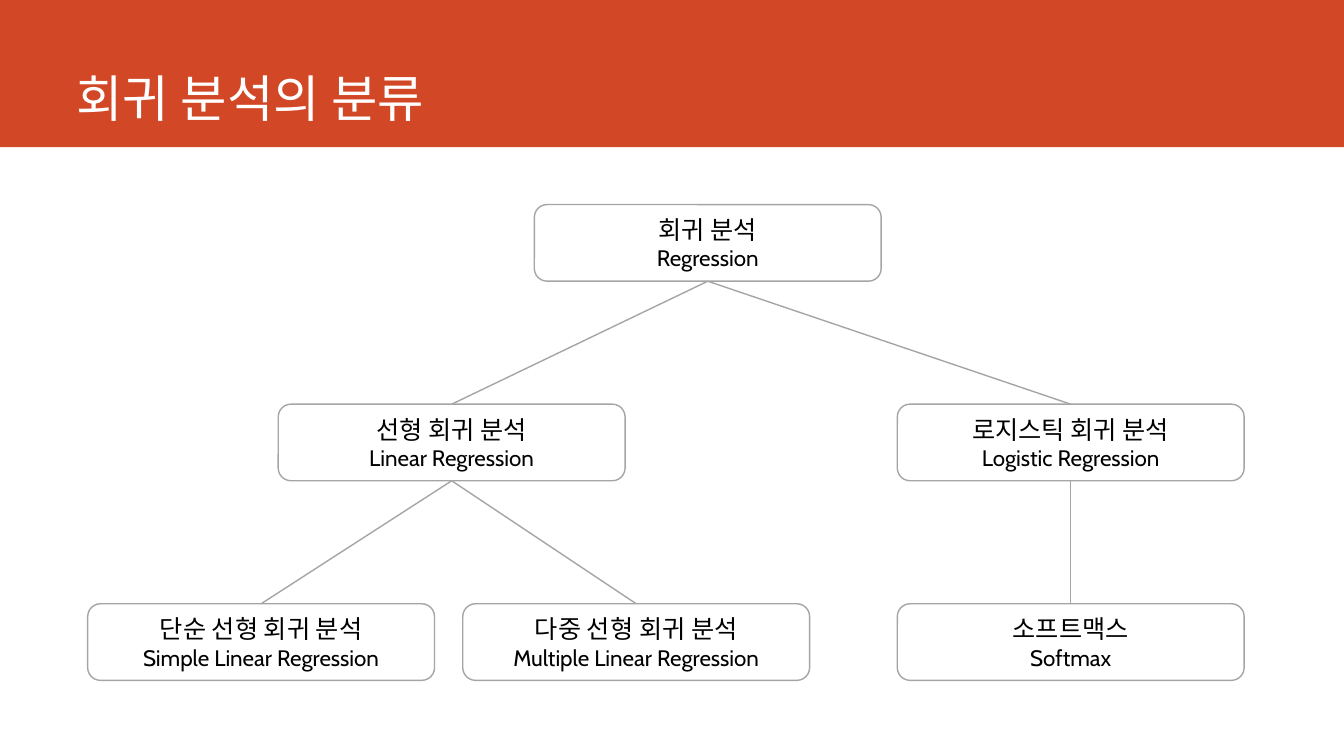
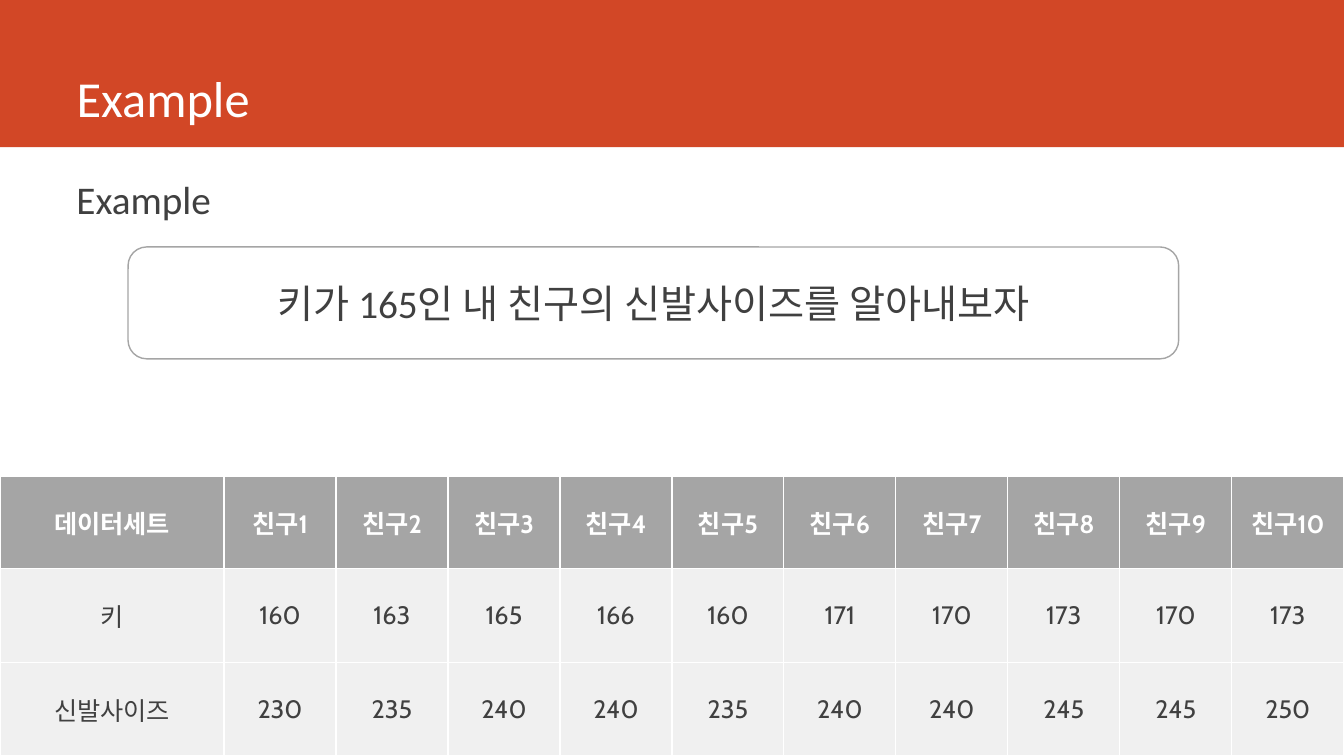
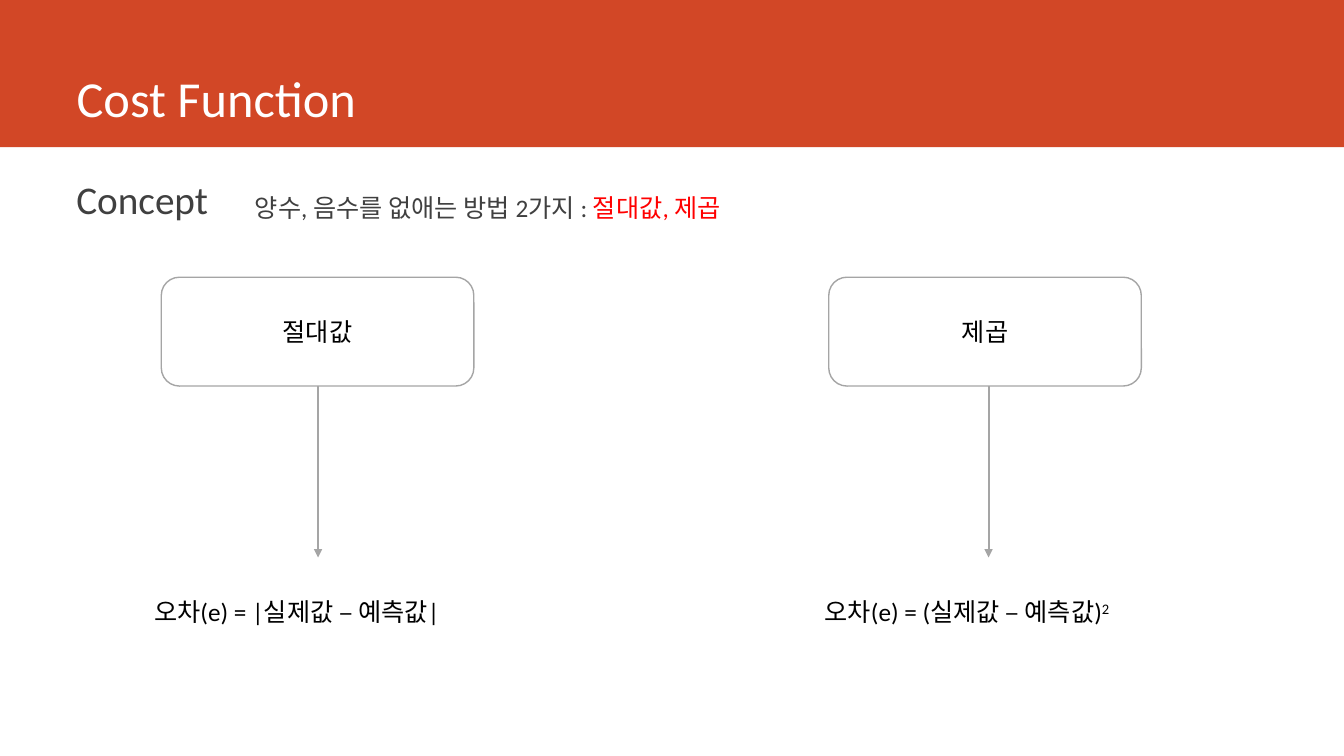
import pptx
import pptx.dml.color
import pptx.enum.shapes
import pptx.enum.text
import pptx.oxml.xmlchemy
import pptx.util

Inches = pptx.util.Inches
Pt = pptx.util.Pt
RGBColor = pptx.dml.color.RGBColor
Shapes = pptx.enum.shapes.MSO_SHAPE
Align = pptx.enum.text.PP_ALIGN
Anchor = pptx.enum.text.MSO_ANCHOR
new_element = pptx.oxml.xmlchemy.OxmlElement

ORANGE = RGBColor(0xD2, 0x47, 0x26)
WHITE = RGBColor(0xFF, 0xFF, 0xFF)
BLACK = RGBColor(0, 0, 0)
DARK = RGBColor(0x40, 0x40, 0x40)
GRAY = RGBColor(0xA5, 0xA5, 0xA5)
PALE = RGBColor(0xF0, 0xF0, 0xF0)
RED = RGBColor(0xFF, 0, 0)

SLIDE_W, SLIDE_H = 13.33, 7.5
BODY_FONT, LABEL_FONT = "Calibri", "Cabin"
MARGIN = 0.66


# Shared text and shape helpers
def style_run(run, size, color, font=BODY_FONT, bold=False):
    run.font.size = Pt(size)
    run.font.name = font
    run.font.bold = bold
    run.font.color.rgb = color


def write(paragraph, text, size, color, font=BODY_FONT, align=Align.LEFT, bold=False):
    paragraph.text = text
    paragraph.alignment = align
    style_run(paragraph.runs[0], size, color, font, bold)


def append_run(paragraph, text, size, color):
    run = paragraph.add_run()
    run.text = text
    style_run(run, size, color)
    return run


def add_text(slide, left, top, width, height, text, size, color):
    label = slide.shapes.add_textbox(Inches(left), Inches(top), Inches(width), Inches(height))
    label.text_frame.word_wrap = True
    paragraph = label.text_frame.paragraphs[0]
    write(paragraph, text, size, color)
    return paragraph


def add_box(slide, left, top, width, height, lines, color=BLACK, font=BODY_FONT):
    """Rounded outline box; lines holds (text, size) pairs."""
    box = slide.shapes.add_shape(
        Shapes.ROUNDED_RECTANGLE, Inches(left), Inches(top), Inches(width), Inches(height))
    box.shadow.inherit = False
    box.fill.solid()
    box.fill.fore_color.rgb = WHITE
    box.line.color.rgb = GRAY
    box.line.width = Pt(1)
    frame = box.text_frame
    frame.word_wrap = True
    frame.vertical_anchor = Anchor.MIDDLE
    for number, (text, size) in enumerate(lines):
        paragraph = frame.add_paragraph() if number else frame.paragraphs[0]
        write(paragraph, text, size, color, font, Align.CENTER)
    return box


def add_line(slide, start=(0, 0), end=(0, 0), width=1):
    line = slide.shapes.add_connector(
        pptx.enum.shapes.MSO_CONNECTOR.STRAIGHT, *(Inches(v) for v in (*start, *end)))
    line.line.color.rgb = GRAY
    line.line.width = Pt(width)
    line._element.spPr.append(new_element("a:effectLst"))
    return line


# Orange band, kept on the layout so every slide shows it
def add_band(layout, slide):
    band = slide.shapes.add_shape(Shapes.RECTANGLE, 0, 0, Inches(SLIDE_W), Inches(1.46))
    band.shadow.inherit = False
    band.fill.solid()
    band.fill.fore_color.rgb = ORANGE
    band.line.fill.background()
    layout.shapes._spTree.insert(2, band._element)


def add_titled_slide(deck, layout, title):
    slide = deck.slides.add_slide(layout)
    heading = slide.shapes.title
    heading.left, heading.top = Inches(MARGIN), 0
    heading.width, heading.height = Inches(11.76), Inches(1.32)
    frame = heading.text_frame
    frame.auto_size = pptx.enum.text.MSO_AUTO_SIZE.NONE
    frame.vertical_anchor = Anchor.BOTTOM
    write(frame.paragraphs[0], title, 36, WHITE)
    return slide


def add_section_heading(slide, text):
    add_text(slide, MARGIN, 1.69, 1.77, 0.57, text, 28, DARK)


# Tree of regression types
def add_tree(slide, left, top):
    node_w, node_h, level_step = 3.44, 0.76, 1.98
    # key: (x offset, level, Korean name, English name, parent)
    nodes = {
        "root": (4.43, 0, "회귀 분석", "Regression", None),
        "linear": (1.89, 1, "선형 회귀 분석", "Linear Regression", "root"),
        "logistic": (8.03, 1, "로지스틱 회귀 분석", "Logistic Regression", "root"),
        "simple": (0, 2, "단순 선형 회귀 분석", "Simple Linear Regression", "linear"),
        "multiple": (3.72, 2, "다중 선형 회귀 분석", "Multiple Linear Regression", "linear"),
        "softmax": (8.03, 2, "소프트맥스", "Softmax", "logistic"),
    }
    boxes = {}
    for key, (x, level, korean, english, parent) in nodes.items():
        boxes[key] = add_box(slide, left + x, top + level * level_step, node_w, node_h,
                             [(korean, 18), (english, 16)], font=LABEL_FONT)
        if parent:
            branch = add_line(slide)
            branch.begin_connect(boxes[parent], 2)
            branch.end_connect(boxes[key], 0)


# Data table across the slide
def add_data_table(slide, left, top, width):
    heights = [160, 163, 165, 166, 160, 171, 170, 173, 170, 173]
    shoe_sizes = [230, 235, 240, 240, 235, 240, 240, 245, 245, 250]
    rows = [
        ["데이터세트"] + [f"친구{n}" for n in range(1, len(heights) + 1)],
        ["키"] + heights,
        ["신발사이즈"] + shoe_sizes,
    ]
    row_heights = [0.91, 0.93, 0.93]
    unit = width / (len(heights) + 2)  # the label column is two units wide
    table = slide.shapes.add_table(
        len(rows), len(rows[0]), Inches(left), Inches(top),
        Inches(width), Inches(sum(row_heights))).table
    table.horz_banding = False
    for number, column in enumerate(table.columns):
        column.width = Inches(unit if number else 2 * unit)
    for r, values in enumerate(rows):
        table.rows[r].height = Inches(row_heights[r])
        header = r == 0
        for c, value in enumerate(values):
            cell = table.cell(r, c)
            cell.fill.solid()
            cell.fill.fore_color.rgb = GRAY if header else PALE
            cell.vertical_anchor = Anchor.MIDDLE
            write(cell.text_frame.paragraphs[0], str(value), 18,
                  WHITE if header else DARK, LABEL_FONT, Align.CENTER, header)


# One way of removing the sign: box, arrow and formula
def add_method(slide, left, top, box_indent, name, formula, exponent=None):
    width, box_h, arrow_end, formula_top = 3.45, 1.08, 2.78, 3.12
    add_box(slide, left + box_indent, top, 3.1, box_h, [(name, 18)])
    center = left + width / 2
    arrow = add_line(slide, (center, top + box_h), (center, top + arrow_end), 1.5)
    tip = new_element("a:tailEnd")
    tip.set("type", "triangle")
    arrow.line._get_or_add_ln().append(tip)
    paragraph = add_text(slide, left, top + formula_top, width, 0.4, formula, 18, BLACK)
    if exponent:
        power = append_run(paragraph, exponent, 18, BLACK)
        power.font._element.set("baseline", "30000")


# Slides
def build_types_slide(deck, layout):
    slide = add_titled_slide(deck, layout, "회귀 분석의 분류")
    add_band(layout, slide)
    add_tree(slide, 0.87, 2.03)


def build_example_slide(deck, layout):
    slide = add_titled_slide(deck, layout, "Example")
    add_section_heading(slide, "Example")
    add_box(slide, 1.27, 2.45, 10.42, 1.11,
            [("키가 165인 내 친구의 신발사이즈를 알아내보자", 28)], DARK)
    add_data_table(slide, 0, 4.73, SLIDE_W)


def build_cost_slide(deck, layout):
    slide = add_titled_slide(deck, layout, "Cost Function")
    add_section_heading(slide, "Concept")
    summary = add_text(slide, 2.43, 1.86, 7.27, 0.4,
                       "양수, 음수를 없애는 방법 2가지 : ", 18, DARK)
    append_run(summary, "절대값, 제곱", 18, RED)
    add_method(slide, 1.43, 2.75, 0.17, "절대값", "오차(e) = |실제값 – 예측값|")
    add_method(slide, 8.08, 2.75, 0.14, "제곱", "오차(e) = (실제값 – 예측값)", "2")


def main():
    deck = pptx.Presentation()
    deck.slide_width, deck.slide_height = Inches(SLIDE_W), Inches(SLIDE_H)
    title_only = deck.slide_layouts[5]
    build_types_slide(deck, title_only)
    build_example_slide(deck, title_only)
    build_cost_slide(deck, title_only)
    deck.save("out.pptx")


if __name__ == "__main__":
    main()
